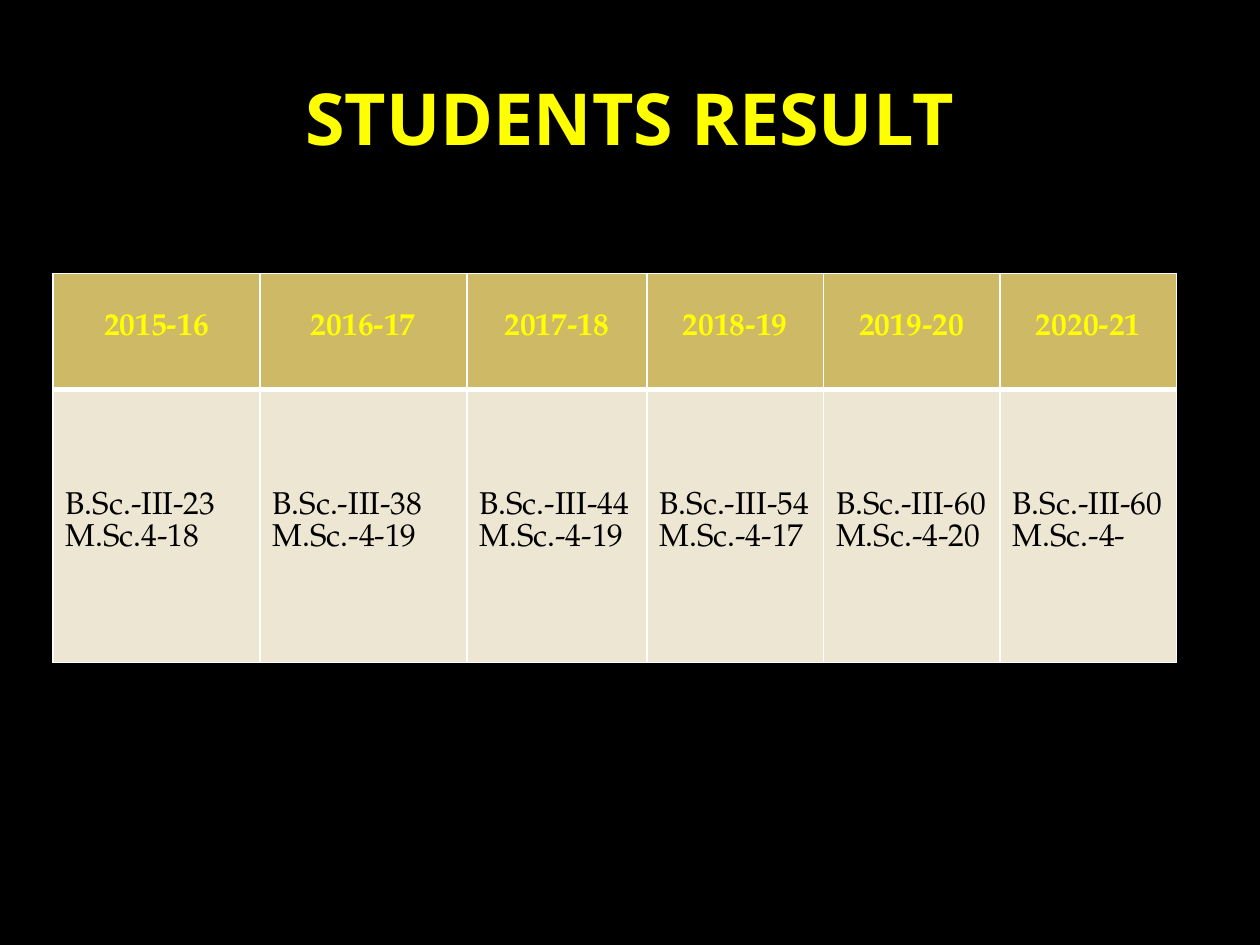
"""Build the students result slide."""
from lxml.etree import SubElement
from pptx import Presentation
from pptx.dml.color import RGBColor
from pptx.enum.text import MSO_ANCHOR, PP_ALIGN
from pptx.oxml.ns import qn
from pptx.util import Cm, Pt

HUES = {"back": "000000", "gold": "CEB966", "cream": "EDE6D3",
        "bright": "FFFF00", "dark": "000000", "line": "FFFFFF"}
TITLE = {"name": "Noto Sans", "size": Pt(41), "bold": True}
HEAD = {"name": "TeX Gyre Pagella", "size": Pt(18), "bold": True}
BODY = {**HEAD, "bold": False}
YEARS = ["2015-16", "2016-17", "2017-18", "2018-19", "2019-20", "2020-21"]
MARKS = ["B.Sc.-III-23\nM.Sc.4-18", "B.Sc.-III-38\nM.Sc.-4-19",
         "B.Sc.-III-44\nM.Sc.-4-19", "B.Sc.-III-54\nM.Sc.-4-17",
         "B.Sc.-III-60\nM.Sc.-4-20", "B.Sc.-III-60\nM.Sc.-4-"]
ROWS = [
    {"texts": YEARS, "high": 2.34, "top": 0.77, "fill": "gold", "hue": "bright",
     "font": HEAD, "align": PP_ALIGN.CENTER, "edges": {"L": 1, "R": 1, "T": 1, "B": 3}},
    {"texts": MARKS, "high": 5.51, "top": 2.06, "fill": "cream", "hue": "dark",
     "font": BODY, "align": PP_ALIGN.LEFT, "edges": {"L": 1, "R": 1, "T": 3, "B": 1}},
]
WIDTHS = [4.17, 4.17, 3.63, 3.56, 3.56, 3.56]


def style(frame, form, hue, align):
    for para in frame.paragraphs:
        para.alignment = align
        for run in para.runs:
            for key, value in form.items():
                setattr(run.font, key, value)
            run.font.color.rgb = RGBColor.from_string(HUES[hue])


def border(cell, edges):
    props = cell._tc.get_or_add_tcPr()
    for side, width in edges.items():
        line = SubElement(props, qn("a:ln" + side), w=str(Pt(width)))
        fill = SubElement(line, qn("a:solidFill"))
        SubElement(fill, qn("a:srgbClr"), val=HUES["line"])


deck = Presentation()
deck.slide_width, deck.slide_height = Cm(25.4), Cm(19.05)
slide = deck.slides.add_slide(deck.slide_layouts[6])
slide.background.fill.solid()
slide.background.fill.fore_color.rgb = RGBColor.from_string(HUES["back"])

title = slide.shapes.add_textbox(Cm(1.27), Cm(0.76), Cm(22.86), Cm(3.18)).text_frame
title.word_wrap = True
title.vertical_anchor = MSO_ANCHOR.MIDDLE
title.text = "STUDENTS RESULT"
style(title, TITLE, "bright", PP_ALIGN.CENTER)

high = sum(row["high"] for row in ROWS)
table = slide.shapes.add_table(len(ROWS), len(WIDTHS), Cm(1.07), Cm(5.51),
                               Cm(sum(WIDTHS)), Cm(high)).table
for column, width in zip(table.columns, WIDTHS):
    column.width = Cm(width)

for line, row in zip(table.rows, ROWS):
    line.height = Cm(row["high"])
    for cell, text in zip(line.cells, row["texts"]):
        cell.text = text
        cell.margin_top = Cm(row["top"])
        border(cell, row["edges"])
        cell.fill.solid()
        cell.fill.fore_color.rgb = RGBColor.from_string(HUES[row["fill"]])
        style(cell.text_frame, row["font"], row["hue"], row["align"])
        for para in cell.text_frame.paragraphs:
            para.line_spacing = Pt(18.3)

deck.save("out.pptx")
